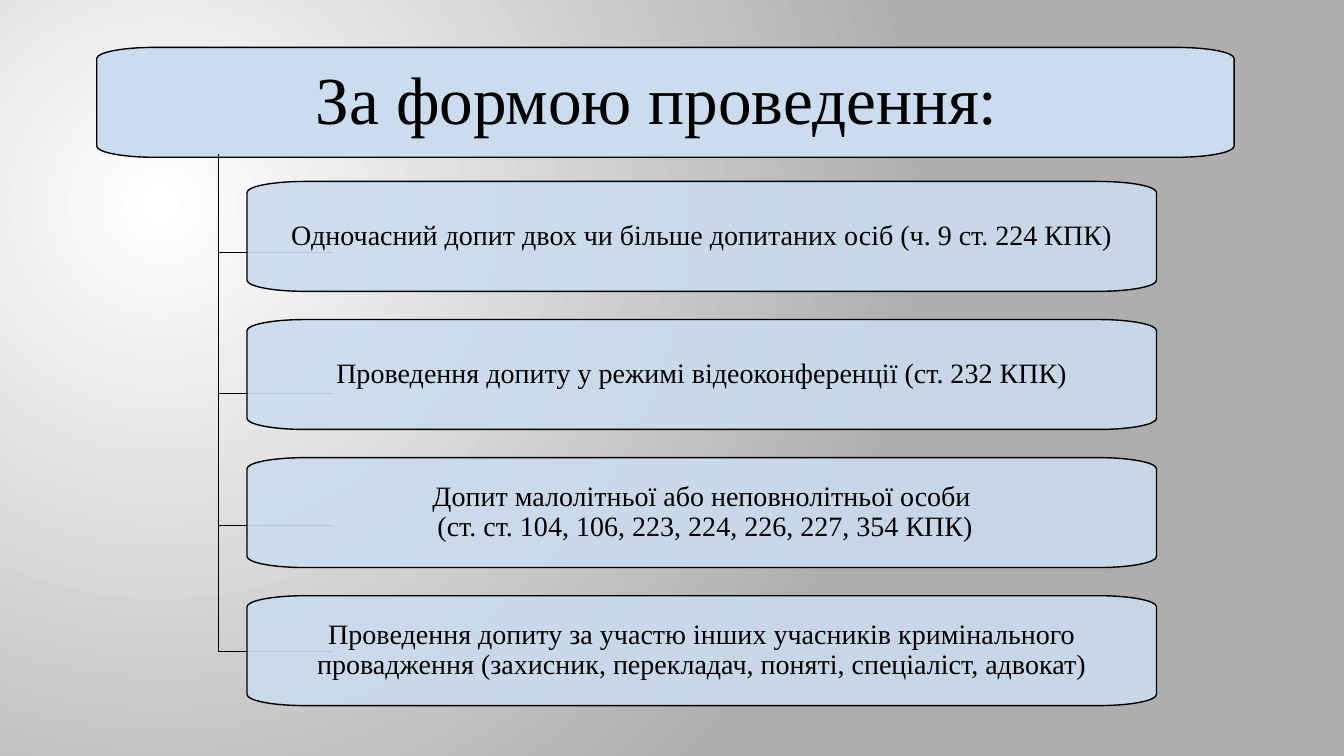
from dataclasses import dataclass

from lxml.etree import SubElement
from pptx import Presentation
from pptx.dml.color import RGBColor
from pptx.enum.text import MSO_ANCHOR, PP_ALIGN
from pptx.oxml.ns import qn
from pptx.util import Inches, Pt


@dataclass(frozen=True)
class Theme:
    box: RGBColor = RGBColor(0xCA, 0xDC, 0xEE)
    ink: RGBColor = RGBColor(0, 0, 0)
    glow: RGBColor = RGBColor(0xFF, 0xFF, 0xFF)
    backdrop: RGBColor = RGBColor(0xAE, 0xAE, 0xAE)
    font: str = "Times New Roman"
    title_size: Pt = Pt(48)
    item_size: Pt = Pt(20)


theme = Theme()


def add_outline(slide, points, line_width, close):
    corners = [(Inches(x), Inches(y)) for x, y in points]
    builder = slide.shapes.build_freeform(*corners[0])
    builder.add_line_segments(corners[1:], close=close)
    shape = builder.convert_to_shape()
    shape.shadow.inherit = False
    shape.fill.background()
    shape.line.color.rgb = theme.ink
    shape.line.width = line_width
    return shape


def add_box(slide, left, top, width, text, size, inset_x, inset_y):
    height, radius_x, radius_y, bend = 1.09, 0.57, 0.11, 0.55
    right, bottom = left + width, top + height
    # Each corner: curve start, two control points, curve end
    points = []
    for x, y, step_x, step_y in ((left, top, radius_x, radius_y),
                                 (right, top, -radius_x, radius_y),
                                 (right, bottom, -radius_x, -radius_y),
                                 (left, bottom, radius_x, -radius_y)):
        pull = 1 - bend
        corner = [(x, y + step_y), (x, y + pull * step_y),
                  (x + pull * step_x, y), (x + step_x, y)]
        # Clockwise travel enters every second corner from the other side
        points += corner if step_x * step_y > 0 else corner[::-1]
    shape = add_outline(slide, points + points[:1], Pt(1), True)

    # Join the three segments of each corner into one curve
    segments = list(shape.element.iter(qn("a:lnTo")))
    for first in range(0, len(segments), 4):
        curve, *rest = segments[first:first + 3]
        curve.tag = qn("a:cubicBezTo")
        for segment in rest:
            curve.append(segment[0])
            segment.getparent().remove(segment)

    shape.fill.solid()
    shape.fill.fore_color.rgb = theme.box
    frame = shape.text_frame
    frame.word_wrap = True
    frame.vertical_anchor = MSO_ANCHOR.MIDDLE
    frame.margin_left = frame.margin_right = Inches(inset_x)
    frame.margin_top = frame.margin_bottom = Inches(inset_y)
    paragraph = frame.paragraphs[0]
    paragraph.text = text
    paragraph.alignment = PP_ALIGN.CENTER
    paragraph.line_spacing = 0.9
    paragraph.font.name = theme.font
    paragraph.font.size = size
    paragraph.font.color.rgb = theme.ink
    return shape


presentation = Presentation()
presentation.slide_width = Inches(13.33)
presentation.slide_height = Inches(7.5)
slide = presentation.slides.add_slide(presentation.slide_layouts[6])

# Background: radial glow at the upper left
background = slide.background.fill
background.gradient()
for stop, color in zip(background.gradient_stops, (theme.glow, theme.backdrop)):
    stop.color.rgb = color
gradient = slide.element.find(".//" + qn("a:gradFill"))
gradient.remove(gradient.find(qn("a:lin")))
radial = SubElement(gradient, qn("a:path"), {"path": "circle"})
SubElement(radial, qn("a:fillToRect"),
           {"l": "50000", "t": "55000", "r": "125000", "b": "100000"})

# Title
add_box(slide, 0.96, 0.47, 11.28, "За формою проведення: ", theme.title_size, 0.09, 0.07)

# Items: text, top and bottom of the elbow line
items = [
    ("Одночасний допит двох чи більше допитаних осіб (ч. 9 ст. 224 КПК)", 1.68, 2.5),
    ("Проведення допиту у режимі відеоконференції (ст. 232 КПК)", 1.71, 3.9),
    ("Допит малолітньої або неповнолітньої особи\v"
     " (ст. ст. 104, 106, 223, 224, 226, 227, 354 КПК)", 1.66, 5.21),
    ("Проведення допиту за участю інших учасників кримінального провадження "
     "(захисник, перекладач, поняті, спеціаліст, адвокат)", 1.53, 6.46),
]
trunk_x, branch_end = 2.17, 3.3
for row, (text, elbow_top, elbow_bottom) in enumerate(items):
    elbow = [(trunk_x, elbow_top), (trunk_x, elbow_bottom), (branch_end, elbow_bottom)]
    add_outline(slide, elbow, Pt(0.5), False)
    box = add_box(slide, 2.45, 1.8 + 1.37 * row, 9.02, text, theme.item_size, 0.05, 0.05)
    # Slightly see-through fill lets the branch show
    color = box.element.spPr.find(qn("a:solidFill")).find(qn("a:srgbClr"))
    SubElement(color, qn("a:alpha"), {"val": "90000"})

presentation.save("out.pptx")
